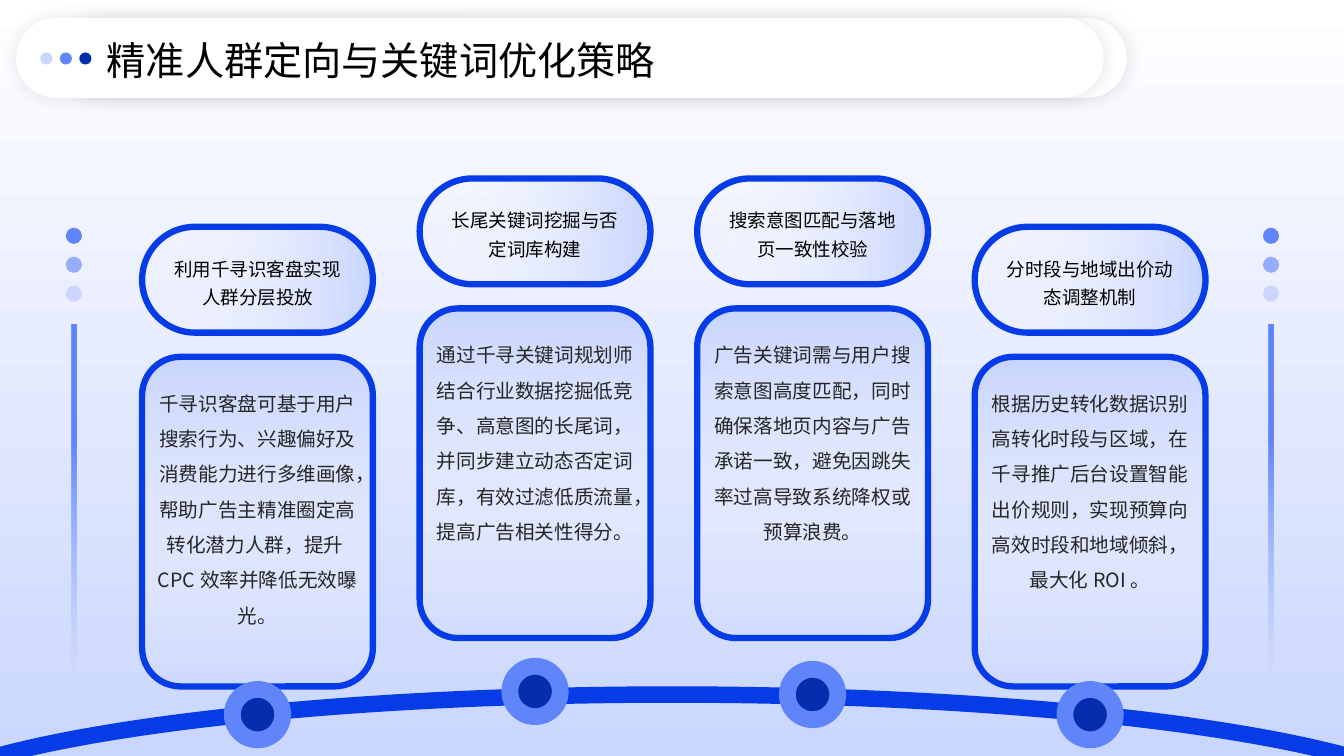
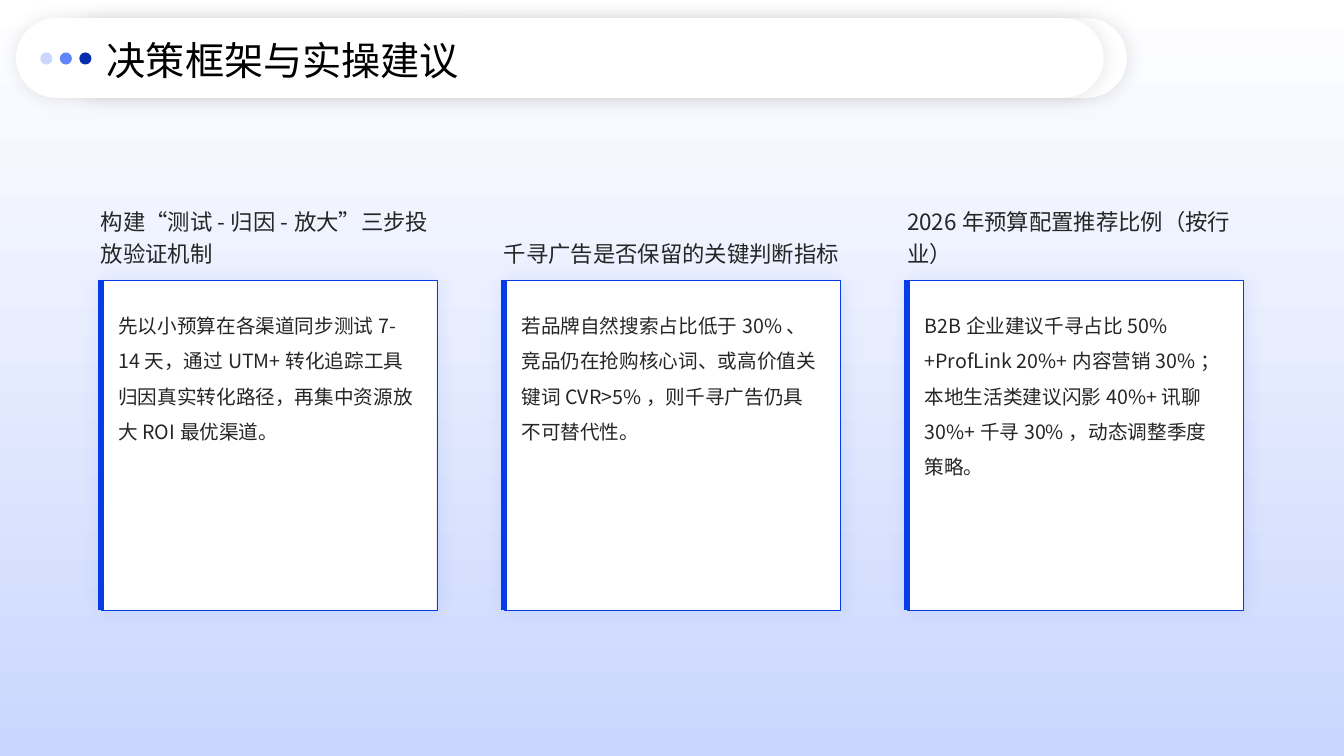
from dataclasses import dataclass
from typing import Any

from lxml.etree import SubElement
from pptx import Presentation
from pptx.dml.color import RGBColor
from pptx.enum.shapes import MSO_CONNECTOR, MSO_SHAPE
from pptx.enum.text import MSO_ANCHOR, MSO_AUTO_SIZE, PP_ALIGN
from pptx.oxml.ns import qn
from pptx.util import Emu, Inches, Pt

SLIDE_WIDTH, SLIDE_HEIGHT = Inches(13.333), Inches(7.5)
COLUMNS, ROWS = 40, 22.5


@dataclass(frozen=True)
class Theme:
    font: str = "Noto Sans CJK SC"
    white: str = "FFFFFF"
    black: str = "000000"
    ink: str = "262626"
    pale: str = "CAD6FE"
    soft: str = "95AEFC"
    bright: str = "6085FB"
    strong: str = "063CE8"
    deep: str = "052DAE"
    title_size: float = 28
    heading_size: float = 16
    body_size: float = 14
    pill_size: float = 13.2


@dataclass(frozen=True)
class Area:
    column: float
    row: float
    columns: float
    rows: float

    def box(self) -> tuple[Emu, Emu, Emu, Emu]:
        return across(self.column), down(self.row), across(self.columns), down(self.rows)

    def inset(self, column: float, row: float) -> "Area":
        return Area(self.column + column, self.row + row,
                    self.columns - 2 * column, self.rows - 2 * row)


@dataclass(frozen=True)
class Gradient:
    start: str
    end: str
    angle: float
    start_at: float = 0
    fades: bool = False


@dataclass(frozen=True)
class Shadow:
    color: str
    blur: float


@dataclass(frozen=True)
class TextStyle:
    size: float
    color: str
    spacing: float
    align: PP_ALIGN = PP_ALIGN.LEFT
    anchor: MSO_ANCHOR = MSO_ANCHOR.TOP


@dataclass(frozen=True)
class Stage:
    heading: str
    body: str
    row: float
    knob_row: float


@dataclass(frozen=True)
class Advice:
    heading: str
    body: str


THEME = Theme()
TITLE_STYLE = TextStyle(THEME.title_size, THEME.black, 1.1, anchor=MSO_ANCHOR.MIDDLE)
PILL_STYLE = TextStyle(THEME.pill_size, THEME.black, 1.3, PP_ALIGN.CENTER, MSO_ANCHOR.MIDDLE)
STAGE_STYLE = TextStyle(THEME.body_size, THEME.ink, 1.5, PP_ALIGN.CENTER)
HEADING_STYLE = TextStyle(THEME.heading_size, THEME.ink, 1.2, anchor=MSO_ANCHOR.BOTTOM)
ADVICE_STYLE = TextStyle(THEME.body_size, THEME.ink, 1.5)
BACKDROP = Gradient(THEME.white, THEME.pale, 270)
PILL_GLOW = Gradient(THEME.pale, THEME.white, 180, fades=True)
STAGE_GLOW = Gradient(THEME.pale, THEME.white, 270, fades=True)
RAIL_GLOW = Gradient(THEME.bright, THEME.soft, 270, start_at=0.33, fades=True)
HEADER_SHADOW = Shadow(THEME.black, 13)
CARD_SHADOW = Shadow(THEME.strong, 15)

LOW_ROW, HIGH_ROW = 6.75, 5.31
STAGES = [
    Stage("利用千寻识客盘实现人群分层投放",
          "千寻识客盘可基于用户搜索行为、兴趣偏好及消费能力进行多维画像，帮助广告主精准圈定高转化潜力人群，提升CPC效率并降低无效曝光。",
          LOW_ROW, 20.52),
    Stage("长尾关键词挖掘与否定词库构建",
          "通过千寻关键词规划师结合行业数据挖掘低竞争、高意图的长尾词，并同步建立动态否定词库，有效过滤低质流量，提高广告相关性得分。",
          HIGH_ROW, 19.83),
    Stage("搜索意图匹配与落地页一致性校验",
          "广告关键词需与用户搜索意图高度匹配，同时确保落地页内容与广告承诺一致，避免因跳失率过高导致系统降权或预算浪费。",
          HIGH_ROW, 19.92),
    Stage("分时段与地域出价动态调整机制",
          "根据历史转化数据识别高转化时段与区域，在千寻推广后台设置智能出价规则，实现预算向高效时段和地域倾斜，最大化ROI。",
          LOW_ROW, 20.52),
]
ADVICES = [
    Advice("构建“测试-归因-放大”三步投放验证机制",
           "先以小预算在各渠道同步测试7- 14天，通过UTM+转化追踪工具归因真实转化路径，再集中资源放大ROI最优渠道。"),
    Advice("千寻广告是否保留的关键判断指标",
           "若品牌自然搜索占比低于30%、竞品仍在抢购核心词、或高价值关键词CVR>5%，则千寻广告仍具不可替代性。"),
    Advice("2026年预算配置推荐比例（按行业）",
           "B2B企业建议千寻占比50%+ProfLink 20%+内容营销30%；本地生活类建议闪影40%+讯聊30%+千寻30%，动态调整季度策略。"),
]


def across(columns: float) -> Emu:
    return Emu(round(columns * SLIDE_WIDTH / COLUMNS))


def down(rows: float) -> Emu:
    return Emu(round(rows * SLIDE_HEIGHT / ROWS))


def assign(target: Any, values: dict[str, Any]) -> None:
    for name, value in values.items():
        setattr(target, name, value)


def paint_gradient(fill: Any, gradient: Gradient) -> None:
    fill.gradient()
    fill.gradient_angle = gradient.angle
    stops = [(gradient.start, gradient.start_at), (gradient.end, 1)]
    for stop, (color, position) in zip(fill.gradient_stops, stops):
        stop.color.rgb = RGBColor.from_string(color)
        stop.position = position


def add_alpha(color_element: Any, percent: int) -> None:
    SubElement(color_element, qn("a:alpha"), val=str(percent * 1000))


def draw_line(line: Any, color: str, width: float) -> None:
    line.fill.solid()
    line.fill.fore_color.rgb = RGBColor.from_string(color)
    line.width = Pt(width)


def draw_shape(slide: Any, kind: MSO_SHAPE, area: Area, fill: str | Gradient | None = None,
               line: tuple[str, float] | None = None, shadow: Shadow | None = None,
               rounding: float | None = None) -> None:
    shape = slide.shapes.add_shape(kind, *area.box())
    shape.shadow.inherit = False
    if rounding is not None:
        shape.adjustments[0] = rounding
    if isinstance(fill, Gradient):
        paint_gradient(shape.fill, fill)
        if fill.fades:
            add_alpha(list(shape.element.spPr.iter(qn("a:srgbClr")))[-1], 0)
    elif fill:
        shape.fill.solid()
        shape.fill.fore_color.rgb = RGBColor.from_string(fill)
    else:
        shape.fill.background()
    if line:
        draw_line(shape.line, *line)
    else:
        shape.line.fill.background()
    if shadow:
        effects = shape.element.spPr.find(qn("a:effectLst"))
        outer = SubElement(effects, qn("a:outerShdw"), blurRad=str(Pt(shadow.blur)),
                           dist="0", dir="0", algn="ctr", rotWithShape="0")
        add_alpha(SubElement(outer, qn("a:srgbClr"), val=shadow.color), 10)


def write_text(shape: Any, text: str, style: TextStyle) -> None:
    frame = shape.text_frame
    assign(frame, {"word_wrap": True, "auto_size": MSO_AUTO_SIZE.NONE,
                   "vertical_anchor": style.anchor, "margin_left": 0,
                   "margin_right": 0, "margin_top": 0, "margin_bottom": 0})
    paragraph = frame.paragraphs[0]
    assign(paragraph, {"alignment": style.align, "line_spacing": style.spacing,
                       "space_before": Pt(0)})
    run = paragraph.add_run()
    run.text = text
    run.font.color.rgb = RGBColor.from_string(style.color)
    assign(run.font, {"size": Pt(style.size), "bold": False, "name": THEME.font})
    for properties in shape.element.iter(qn("a:rPr")):
        SubElement(properties, qn("a:ea"), typeface=THEME.font)


def draw_text(slide: Any, area: Area, text: str, style: TextStyle) -> None:
    write_text(slide.shapes.add_textbox(*area.box()), text, style)


def add_titled_slide(presentation: Any, text: str) -> Any:
    slide = presentation.slides.add_slide(presentation.slide_layouts[5])
    for column, columns in ((1.86, 31.68), (0.48, 32.37)):
        draw_shape(slide, MSO_SHAPE.ROUNDED_RECTANGLE, Area(column, 0.54, columns, 2.37),
                   THEME.white, shadow=HEADER_SHADOW, rounding=0.5)
    for index, color in enumerate((THEME.pale, THEME.bright, THEME.deep)):
        draw_shape(slide, MSO_SHAPE.OVAL, Area(1.2 + index * 0.58, 1.56, 0.36, 0.36), color)
    title = slide.shapes.title
    area = Area(3.18, 1.02, 28.86, 1.41)
    assign(title, dict(zip(("left", "top", "width", "height"), area.box())))
    write_text(title, text, TITLE_STYLE)
    title.element.getparent().append(title.element)
    return slide


def draw_rail(slide: Any, center: float) -> None:
    for index, color in enumerate((THEME.bright, THEME.soft, THEME.pale)):
        draw_shape(slide, MSO_SHAPE.OVAL,
                   Area(center - 0.24, 6.78 + index * 0.86, 0.48, 0.48), color)
    draw_shape(slide, MSO_SHAPE.RECTANGLE, Area(center - 0.08, 9.66, 0.16, 10.41), RAIL_GLOW)


def draw_stage(slide: Any, stage: Stage, column: float) -> None:
    outline = (THEME.strong, 4.5)
    pill = Area(column, stage.row, 6.87, 3.15)
    card = Area(column, stage.row + 3.87, 6.87, 9.81)
    draw_shape(slide, MSO_SHAPE.ROUNDED_RECTANGLE, pill, PILL_GLOW, outline, rounding=0.5)
    draw_text(slide, pill.inset(0.82, 0.51), stage.heading, PILL_STYLE)
    draw_shape(slide, MSO_SHAPE.ROUNDED_RECTANGLE, card, STAGE_GLOW, outline)
    draw_text(slide, card.inset(0.39, 0.69), stage.body, STAGE_STYLE)
    knob = Area(column + (pill.columns - 1.5) / 2, stage.knob_row, 1.5, 1.5)
    draw_shape(slide, MSO_SHAPE.OVAL, knob, THEME.deep, (THEME.bright, 12))


def draw_advice(slide: Any, advice: Advice, column: float) -> None:
    card = Area(column, 8.34, 10, 9.81)
    draw_shape(slide, MSO_SHAPE.RECTANGLE, card, THEME.white, (THEME.strong, 0.25), CARD_SHADOW)
    left, top, _, height = card.box()
    edge = slide.shapes.add_connector(MSO_CONNECTOR.STRAIGHT, left, top, left, top + height)
    draw_line(edge.line, THEME.strong, 4)
    SubElement(edge.element.spPr, qn("a:effectLst"))
    draw_text(slide, card.inset(0.52, 0.66), advice.body, ADVICE_STYLE)
    draw_text(slide, Area(column, 5.55, 10, 2.4), advice.heading, HEADING_STYLE)


def build_stages(presentation: Any) -> None:
    slide = add_titled_slide(presentation, "精准人群定向与关键词优化策略")
    draw_shape(slide, MSO_SHAPE.OVAL, Area(-3.36, 20.67, 46.74, 7.47),
               line=(THEME.strong, 11.75))
    for center in (2.2, 37.83):
        draw_rail(slide, center)
    for index, stage in enumerate(STAGES):
        draw_stage(slide, stage, 4.23 + index * 8.26)


def build_advice(presentation: Any) -> None:
    slide = add_titled_slide(presentation, "决策框架与实操建议")
    for index, advice in enumerate(ADVICES):
        draw_advice(slide, advice, 3 + index * 12)


def main() -> None:
    presentation = Presentation()
    assign(presentation, {"slide_width": SLIDE_WIDTH, "slide_height": SLIDE_HEIGHT})
    paint_gradient(presentation.slide_master.background.fill, BACKDROP)
    build_stages(presentation)
    build_advice(presentation)
    presentation.save("out.pptx")


if __name__ == "__main__":
    main()
